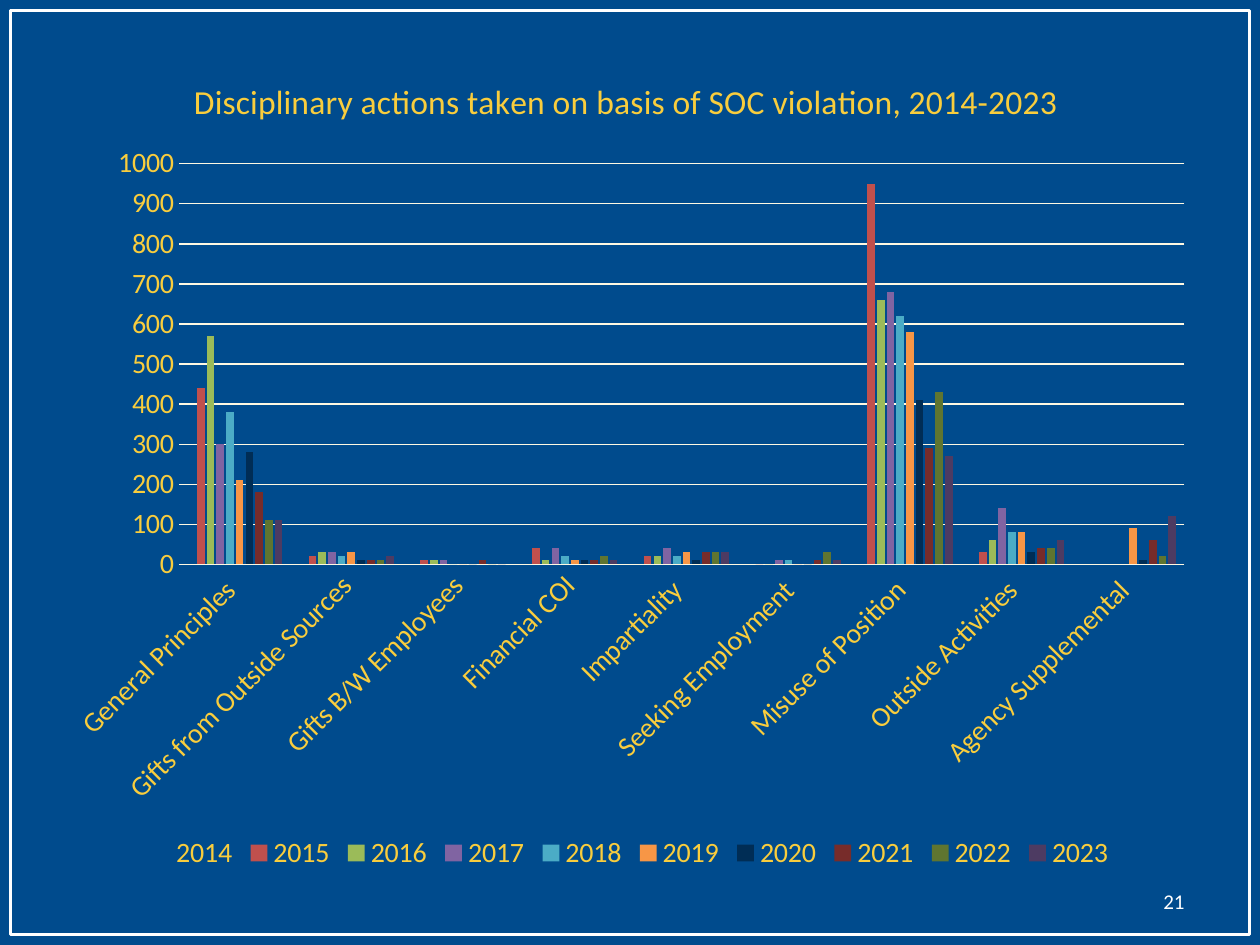
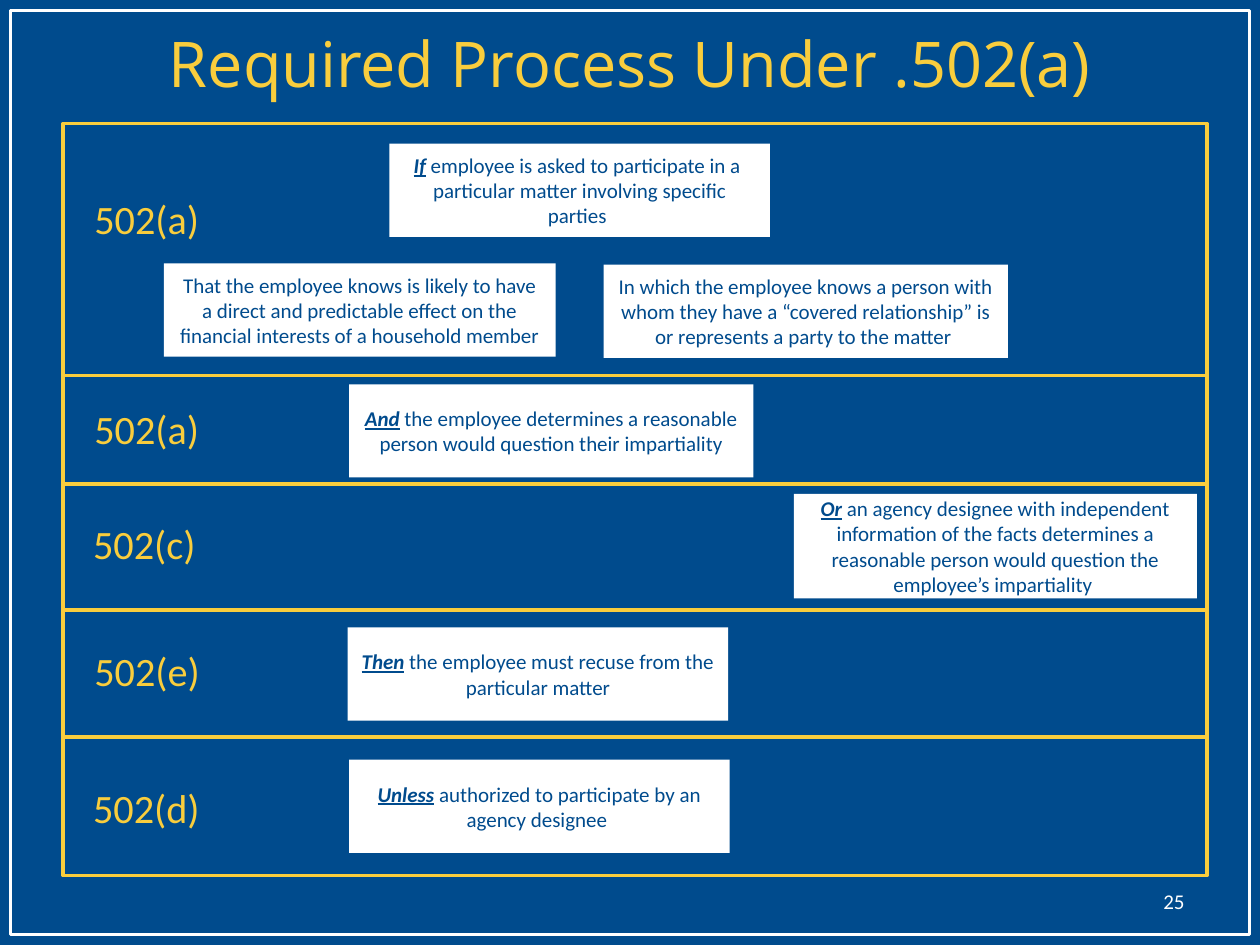
from lxml import etree
from pptx import Presentation
from pptx import util as u
from pptx.chart.data import CategoryChartData
from pptx.dml.color import RGBColor
from pptx.enum import chart as ch, shapes, text
from pptx.oxml.ns import qn

COLORS = {"navy": "004B8D", "gold": "F9CD3D", "white": "FFFFFF", "cream": "FEF8E2"}
BODY, DISPLAY = "Calibri", "Open Sans"
WIDTH, HEIGHT = 10, 7.5
MARGIN = 0.5
BORDER = 1 / 12

ACTIONS_TITLE = "Disciplinary actions taken on basis of SOC violation, 2014-2023"
CHART_PLACE = (0.42, 0.42, 9.17, 6.53)
TITLE_CORNER = (1.49, 0.57)
PLOT_PLACE = (1.42, 1.3, 7.98, 3.18)
VIOLATIONS = ["General Principles ", "Gifts from Outside Sources", "Gifts B/W Employees",
              "Financial COI", "Impartiality ", "Seeking Employment ", "Misuse of Position ",
              "Outside Activities ", "Agency Supplemental "]
ACTIONS = [
    ("2014", "navy", [None] * len(VIOLATIONS)),
    ("2015", "C0504D", [440, 20, 10, 40, 20, 0, 950, 30, None]),
    ("2016", "9BBB59", [570, 30, 10, 10, 20, 0, 660, 60, None]),
    ("2017", "8064A2", [300, 30, 10, 40, 40, 10, 680, 140, None]),
    ("2018", "4BACC6", [380, 20, 0, 20, 20, 10, 620, 80, None]),
    ("2019", "F79646", [210, 30, 0, 10, 30, 0, 580, 80, 90]),
    ("2020", "002D55", [280, 10, 0, 10, 10, 0, 410, 30, 10]),
    ("2021", "772C2A", [180, 10, 10, 10, 30, 10, 290, 40, 60]),
    ("2022", "5F7530", [110, 10, 0, 20, 30, 30, 430, 40, 20]),
    ("2023", "4D3B62", [110, 20, 0, 10, 30, 10, 270, 60, 120]),
]

PROCESS_TITLE = "Required Process Under .502(a)"
ROWS_TOP, ROW_WIDTH = 0.98, 9.08
NARROW, WIDE, CARD_HEIGHT = 3.02, 3.21, 0.74
PROCESS = [
    (2.0, "502(a)", 0.65, 0.51, [
        (3.09, 0.16, NARROW, CARD_HEIGHT, "If",
         [" employee is asked to participate in a ",
          "particular matter involving specific parties "]),
        (1.3, 1.11, 3.11, CARD_HEIGHT, "",
         ["That the employee knows is likely to have a direct and predictable effect on the "
          "financial interests of a household member"]),
        (4.79, 1.12, WIDE, CARD_HEIGHT, "",
         ["In which the employee knows a person with whom they have a “covered relationship” is "
          "or represents a party to the matter "]),
    ]),
    (0.86, "502(a)", 0.65, 0.18, [
        (2.77, 0.07, WIDE, CARD_HEIGHT, "And",
         [" the employee determines a reasonable person would question their impartiality"]),
    ]),
    (1.0, "502(c)", 0.64, 0.23, [
        (6.3, 0.08, 3.2, 0.83, "Or",
         [" an agency designee with independent information of the facts determines a "
          "reasonable person would question the employee’s impartiality "]),
    ]),
    (1.01, "502(e)", 0.65, 0.24, [
        (2.76, 0.14, NARROW, CARD_HEIGHT, "Then",
         [" the employee must recuse from the particular matter"]),
    ]),
    (1.1, "502(d)", 0.64, 0.32, [
        (2.77, 0.18, NARROW, CARD_HEIGHT, "Unless",
         [" authorized to participate by an agency designee "]),
    ]),
]


def rgb(value):
    return RGBColor.from_string(COLORS.get(value, value))


def inches(*lengths):
    return [u.Inches(length) for length in lengths]


def style(font, size, color, face=BODY):
    font.size, font.name, font.color.rgb = u.Pt(size), face, rgb(color)
    font.bold = False


def add_run(paragraph, words, size, color, face=BODY):
    run = paragraph.add_run()
    run.text = words
    style(run.font, size, color, face)
    return run


def add_rect(slide, place, fill=None, line=None):
    rect = slide.shapes.add_shape(shapes.MSO_SHAPE.RECTANGLE, *inches(*place))
    rect.shadow.inherit = False
    if fill:
        rect.fill.solid()
        rect.fill.fore_color.rgb = rgb(fill)
    else:
        rect.fill.background()
    if line:
        rect.line.color.rgb = rgb(line)
        rect.line.width = u.Pt(2)
    else:
        rect.line.fill.background()
    return rect


def add_text(slide, place, words, size, color, align, face=BODY, wrap=True,
             anchor=text.MSO_ANCHOR.MIDDLE):
    frame = slide.shapes.add_textbox(*inches(*place)).text_frame
    frame.word_wrap, frame.vertical_anchor = wrap, anchor
    frame.paragraphs[0].alignment = align
    add_run(frame.paragraphs[0], words, size, color, face)


def add_slide(deck, number):
    slide = deck.slides.add_slide(deck.slide_layouts[6])
    slide.background.fill.solid()
    slide.background.fill.fore_color.rgb = rgb("navy")
    add_rect(slide, (BORDER, BORDER, WIDTH - 2 * BORDER, HEIGHT - 2 * BORDER), line="white")
    add_text(slide, (7.17, 6.95, 2.33, 0.4), number, 12, "white", text.PP_ALIGN.RIGHT)
    return slide


def place_in_chart(parent, index, left, top, *size, **settings):
    chart_left, chart_top, chart_width, chart_height = CHART_PLACE
    settings.update(xMode="edge", yMode="edge", x=(left - chart_left) / chart_width,
                    y=(top - chart_top) / chart_height)
    if size:
        settings.update(w=size[0] / chart_width, h=size[1] / chart_height)
    layout = parent.find(qn("c:layout"))
    if layout is None:
        layout = etree.Element(qn("c:layout"))
        parent.insert(index, layout)
    manual = etree.SubElement(layout, qn("c:manualLayout"))
    for tag, value in settings.items():
        etree.SubElement(manual, qn("c:" + tag)).set("val", str(value))


def build_actions(deck):
    slide = add_slide(deck, "21")
    data = CategoryChartData()
    data.categories = VIOLATIONS
    for year, _, counts in ACTIONS:
        data.add_series(year, counts)
    chart = slide.shapes.add_chart(ch.XL_CHART_TYPE.COLUMN_CLUSTERED,
                                   *inches(*CHART_PLACE), data).chart
    style(chart.font, 16, "gold")

    chart.has_title = True
    add_run(chart.chart_title.text_frame.paragraphs[0], ACTIONS_TITLE, 19.2, "gold")
    place_in_chart(chart.chart_title._element, 1, *TITLE_CORNER)
    place_in_chart(chart._chartSpace.chart.plotArea, 0, *PLOT_PLACE, layoutTarget="inner")

    chart.has_legend = True
    chart.legend.position = ch.XL_LEGEND_POSITION.BOTTOM
    chart.legend.include_in_layout = False
    style(chart.legend.font, 16, "gold")

    plot = chart.plots[0]
    plot.gap_width, plot.overlap, plot.vary_by_categories = 219, -27, False
    for series, (_, color, _) in zip(plot.series, ACTIONS):
        series.format.fill.solid()
        series.format.fill.fore_color.rgb = rgb(color)

    kinds, counts = chart.category_axis, chart.value_axis
    for axis in (kinds, counts):
        axis.major_tick_mark = axis.minor_tick_mark = ch.XL_TICK_MARK.NONE
        style(axis.tick_labels.font, 16, "gold")
    kinds._element.txPr.bodyPr.set("rot", str(-45 * 60000))
    counts.minimum_scale, counts.maximum_scale, counts.major_unit = 0, 1000, 100
    counts.format.line.fill.background()
    for line in (kinds.format.line, counts.major_gridlines.format.line):
        line.color.rgb = rgb("cream")
        line.width = u.Pt(0.75)


def add_card(slide, place, keyword, paragraphs):
    frame = add_rect(slide, place, fill="white").text_frame
    frame.word_wrap, frame.vertical_anchor = True, text.MSO_ANCHOR.MIDDLE
    for index, words in enumerate(paragraphs):
        paragraph = frame.add_paragraph() if index else frame.paragraphs[0]
        paragraph.alignment = text.PP_ALIGN.CENTER
        if keyword and index == 0:
            font = add_run(paragraph, keyword, 12, "navy").font
            font.bold = font.italic = font.underline = True
        add_run(paragraph, words, 12, "navy")


def build_process(deck):
    slide = add_slide(deck, "25")
    add_text(slide, (MARGIN, -0.13, WIDTH - 2 * MARGIN, 1.25), PROCESS_TITLE, 36, "gold",
             text.PP_ALIGN.CENTER, DISPLAY)
    top = ROWS_TOP
    for height, label, label_left, label_drop, cards in PROCESS:
        add_rect(slide, (MARGIN, top, ROW_WIDTH, height), line="gold")
        add_text(slide, (label_left, top + label_drop, 1.07, 0.49), label, 23, "gold",
                 text.PP_ALIGN.LEFT, wrap=False, anchor=text.MSO_ANCHOR.TOP)
        for left, drop, width, card_height, keyword, paragraphs in cards:
            add_card(slide, (left, top + drop, width, card_height), keyword, paragraphs)
        top += height


def main():
    deck = Presentation()
    deck.slide_width, deck.slide_height = inches(WIDTH, HEIGHT)
    build_actions(deck)
    build_process(deck)
    deck.save("out.pptx")


if __name__ == "__main__":
    main()
